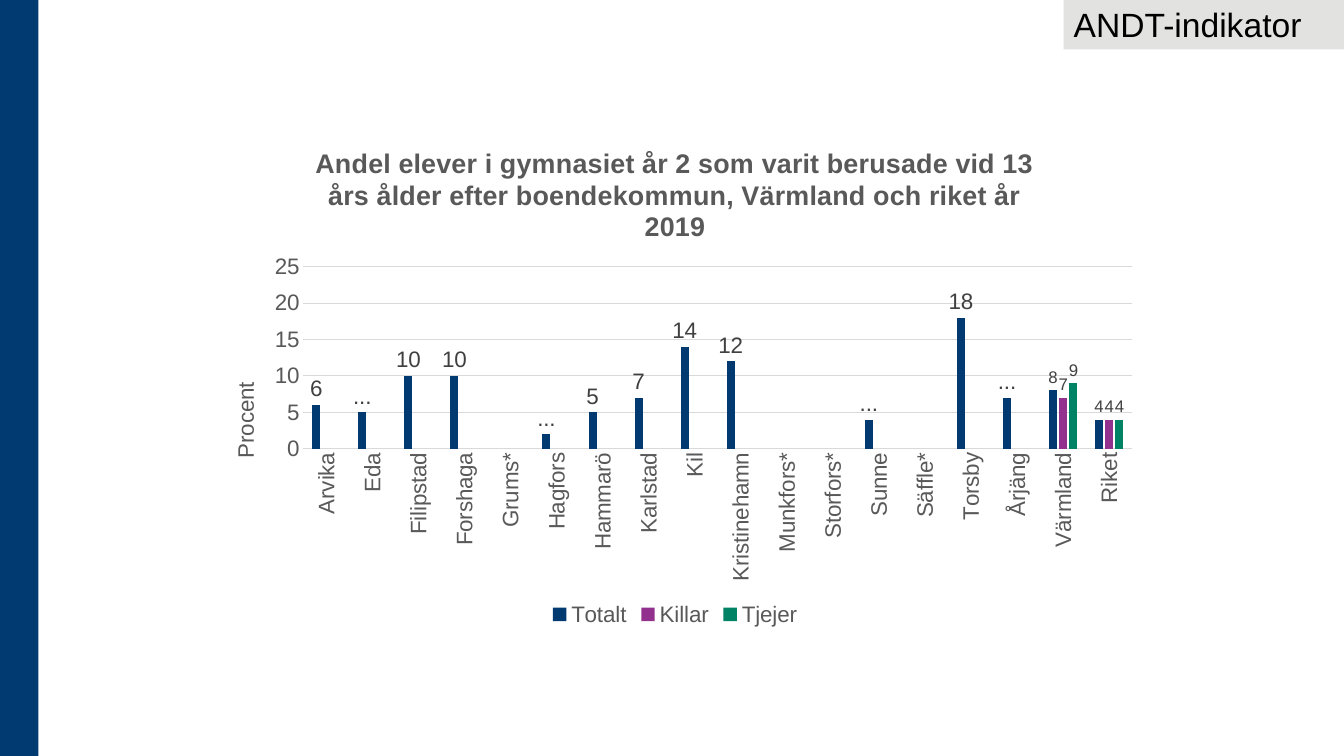
from lxml import etree
from pptx import Presentation
from pptx import util as u
from pptx.chart.data import CategoryChartData
from pptx.dml.color import RGBColor
from pptx.enum import chart as charts, shapes, text
from pptx.oxml.ns import qn

FONT = "Arial"
NAVY, PALE_GREY, GREY, DARK, GRID = "003A70", "E2E2E1", "595959", "404040", "D9D9D9"

PLACES = ["Arvika", "Eda", "Filipstad", "Forshaga", "Grums*", "Hagfors", "Hammarö",
          "Karlstad", "Kil", "Kristinehamn", "Munkfors*", "Storfors*", "Sunne",
          "Säffle*", "Torsby", "Årjäng", "Värmland", "Riket"]
NO_MUNICIPAL_VALUES = [None] * 16
# name, values, colour, label size
SERIES = [
    ("Totalt", [6, 5, 10, 10, None, 2, 5, 7, 14, 12, None, None, 4, None, 18, 7, 8, 4], NAVY, 16),
    ("Killar", NO_MUNICIPAL_VALUES + [7, 4], "93328E", 12),
    ("Tjejer", NO_MUNICIPAL_VALUES + [9, 4], "008264", 12),
]
DOTTED_PLACES = ["Eda", "Hagfors", "Sunne", "Årjäng"]
GROUPED_PLACES = ["Värmland", "Riket"]
TITLE = ("Andel elever i gymnasiet år 2 som varit berusade vid 13 års ålder "
         "efter boendekommun, Värmland och riket år 2019")


def color(hex_value):
    return RGBColor.from_string(hex_value)


def style_font(font, size=16, hex_value=GREY, bold=False):
    font.name, font.size, font.bold = FONT, u.Pt(size), bold
    font.color.rgb = color(hex_value)


def write(frame, content, **font_format):
    frame.text = content
    style_font(frame.paragraphs[0].runs[0].font, **font_format)


def add_box(slide, left, top, width, height, fill):
    box = slide.shapes.add_shape(shapes.MSO_SHAPE.RECTANGLE, u.Inches(left), u.Inches(top),
                                 u.Inches(width), u.Inches(height))
    box.shadow.inherit = False
    box.fill.solid()
    box.fill.fore_color.rgb = color(fill)
    box.line.fill.background()
    return box


def add_tag(slide, left, top, width, height):
    frame = add_box(slide, left, top, width, height, PALE_GREY).text_frame
    frame.word_wrap = True
    frame.vertical_anchor = text.MSO_ANCHOR.TOP
    write(frame, "ANDT-indikator", size=24, hex_value="000000")
    frame.paragraphs[0].alignment = text.PP_ALIGN.LEFT


def set_layout(parent, position, **settings):
    """Place a chart part by fractions of the chart's size."""
    for old in parent.findall(qn("c:layout")):
        parent.remove(old)
    layout = etree.Element(qn("c:layout"))
    manual = etree.SubElement(layout, qn("c:manualLayout"))
    for name, value in {**settings, "xMode": "edge", "yMode": "edge", **position}.items():
        etree.SubElement(manual, qn("c:" + name)).set("val", str(value))
    parent.insert(1 if parent.find(qn("c:tx")) is not None else 0, layout)


def turn_upright(element):
    for body in element.iter(qn("a:bodyPr")):
        body.set("rot", "-5400000")
        body.set("vert", "horz")


def style_line(line, hex_value):
    line.color.rgb = color(hex_value)
    line.width = u.Pt(0.75)


def style_axes(chart):
    places, percent = chart.category_axis, chart.value_axis
    for axis in (places, percent):
        axis.major_tick_mark = axis.minor_tick_mark = charts.XL_TICK_MARK.NONE
        style_font(axis.tick_labels.font)
    style_line(places.format.line, GRID)
    turn_upright(places.tick_labels.font._element.getparent().getparent().getparent())

    percent.minimum_scale, percent.maximum_scale, percent.major_unit = 0, 25, 5
    percent.tick_labels.number_format = "0"
    percent.tick_labels.number_format_is_linked = False
    percent.format.line.fill.background()
    style_line(percent.major_gridlines.format.line, GRID)
    write(percent.axis_title.text_frame, "Procent")
    title = percent.axis_title._element
    turn_upright(title)
    set_layout(title, {"x": 0.03, "y": 0.5})


def style_series(series, hex_value, label_size):
    series.format.fill.solid()
    series.format.fill.fore_color.rgb = color(hex_value)
    series.invert_if_negative = False
    labels = series.data_labels
    labels.show_value = True
    labels.position = charts.XL_LABEL_POSITION.OUTSIDE_END
    labels.number_format, labels.number_format_is_linked = "0", False
    style_font(labels.font, label_size, DARK)


def label_points(series):
    """Replace low-count labels by dots and shrink those of grouped bars."""
    for place in DOTTED_PLACES + GROUPED_PLACES:
        label = series.points[PLACES.index(place)].data_label
        if place in DOTTED_PLACES:
            write(label.text_frame, "...", hex_value=DARK)
        else:
            style_font(label.font, 12, DARK)
        label.position = charts.XL_LABEL_POSITION.OUTSIDE_END


def add_debut_chart(slide, left, top, width, height):
    data = CategoryChartData(number_format="0")
    data.categories = PLACES
    for name, values, _, _ in SERIES:
        data.add_series(name, values)
    chart = slide.shapes.add_chart(
        charts.XL_CHART_TYPE.COLUMN_CLUSTERED, u.Inches(left), u.Inches(top),
        u.Inches(width), u.Inches(height), data).chart
    style_font(chart.font, hex_value="000000")
    chart.has_title = True
    write(chart.chart_title.text_frame, TITLE, size=19.2, bold=True)
    chart.chart_title.include_in_layout = False
    chart.has_legend = True
    chart.legend.position = charts.XL_LEGEND_POSITION.BOTTOM
    chart.legend.include_in_layout = False
    style_font(chart.legend.font)

    plot = chart.plots[0]
    plot.vary_by_categories = False
    plot.gap_width, plot.overlap = 219, -27
    for series, (_, _, hex_value, label_size) in zip(plot.series, SERIES):
        style_series(series, hex_value, label_size)
    label_points(plot.series[0])
    style_axes(chart)
    plot_area = chart._chartSpace.find(".//" + qn("c:plotArea"))
    set_layout(plot_area, {"x": 0.11, "y": 0.28, "w": 0.87, "h": 0.36}, layoutTarget="inner")


def main():
    presentation = Presentation()
    presentation.slide_width, presentation.slide_height = u.Inches(13.33), u.Inches(7.5)
    slide = presentation.slides.add_slide(presentation.slide_layouts[6])
    add_box(slide, 0, 0, 0.38, 7.5, NAVY)
    add_tag(slide, 10.55, -0.01, 2.78, 0.5)
    add_debut_chart(slide, 1.97, 1.24, 9.45, 5.02)
    presentation.save("out.pptx")


if __name__ == "__main__":
    main()
